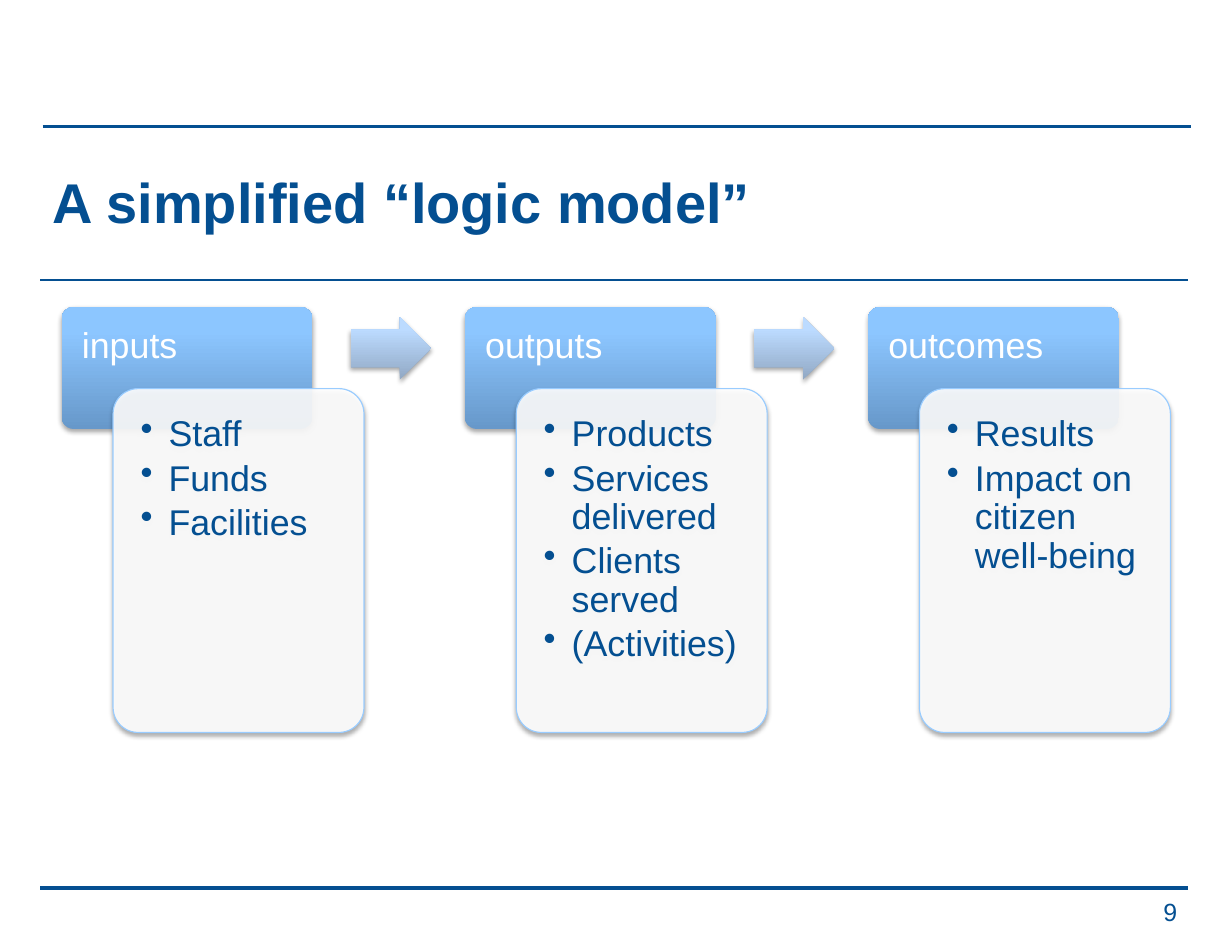
"""Build a slide showing a simplified logic model: inputs, outputs, outcomes."""
import dataclasses

import lxml.etree
import pptx
import pptx.dml.color
import pptx.enum.shapes
import pptx.enum.text
import pptx.oxml
import pptx.oxml.ns
import pptx.util

Inches = pptx.util.Inches
Pt = pptx.util.Pt
RGB = pptx.dml.color.RGBColor.from_string
Shapes = pptx.enum.shapes.MSO_SHAPE
Align = pptx.enum.text.PP_ALIGN
Anchor = pptx.enum.text.MSO_ANCHOR
qn = pptx.oxml.ns.qn


@dataclasses.dataclass(frozen=True)
class Theme:
    font: str = "Arial"
    navy: str = "044F91"
    white: str = "FFFFFF"
    panel_border: str = "99CCFF"
    header_stops: tuple = ("6798CA", "8CC6FF", "8EC7FF")
    arrow_stops: tuple = ("91A8C4", "BCDBFF", "BEDCFF")
    title_size: int = 36
    body_size: int = 23
    number_size: int = 16


def add_block(kind, left, top, width, height, adjustments, stops=None):
    """Add a softly shadowed shape, with an upward gradient if stops are given."""
    shape = slide.shapes.add_shape(
        kind, Inches(left), Inches(top), Inches(width), Inches(height))
    for index, value in enumerate(adjustments):
        shape.adjustments[index] = value
    shape.shadow.inherit = False
    properties = shape.element.spPr
    shadow = pptx.oxml.parse_xml(
        f'<a:outerShdw {pptx.oxml.ns.nsdecls("a")} blurRad="{Pt(3.1)}" dist="{Pt(1.8)}" '
        'dir="5400000" rotWithShape="0"><a:srgbClr val="000000">'
        '<a:alpha val="35000"/></a:srgbClr></a:outerShdw>')
    properties.find(qn("a:effectLst")).append(shadow)
    if stops:
        stop_list = "".join(
            f'<a:gs pos="{position}"><a:srgbClr val="{color}"/></a:gs>'
            for position, color in zip((0, 80000, 100000), stops))
        gradient = pptx.oxml.parse_xml(
            f'<a:gradFill {pptx.oxml.ns.nsdecls("a")} rotWithShape="1"><a:gsLst>{stop_list}'
            '</a:gsLst><a:lin ang="16200000" scaled="0"/></a:gradFill>')
        properties.find(qn("a:prstGeom")).addnext(gradient)
        shape.line.fill.background()
    return shape


def write_text(shape, lines, size, color, insets, anchor, align=Align.LEFT,
               bulleted=False, bold=False, spacing=1.0):
    """Fill a shape with formatted paragraphs."""
    frame = shape.text_frame
    frame.word_wrap = True
    frame.auto_size = pptx.enum.text.MSO_AUTO_SIZE.NONE
    frame.vertical_anchor = anchor
    frame.margin_left = frame.margin_right = Inches(insets[0])
    frame.margin_top = frame.margin_bottom = Inches(insets[1])
    for index, line in enumerate(lines):
        paragraph = frame.add_paragraph() if index else frame.paragraphs[0]
        paragraph.alignment = align
        paragraph.line_spacing = spacing
        if bulleted:
            paragraph.space_after = Pt(3.5)
            properties = paragraph._p.get_or_add_pPr()
            properties.set("marL", str(Inches(0.25)))
            properties.set("indent", str(Inches(-0.25)))
            lxml.etree.SubElement(properties, qn("a:buChar")).set("char", "•")
        run = paragraph.add_run()
        run.text = line
        run.font.name = theme.font
        run.font.size = Pt(size)
        run.font.bold = bold
        run.font.color.rgb = RGB(color)


theme = Theme()
presentation = pptx.Presentation()
presentation.slide_width = Inches(11)
presentation.slide_height = Inches(8.5)
slide = presentation.slides.add_slide(presentation.slide_layouts[5])

margin, rule_width = 0.36, 10.25
for left, top, weight in ((0.38, 1.13, 2.5), (margin, 7.93, 2.5), (margin, 2.5, 1.5)):
    rule = slide.shapes.add_connector(
        pptx.enum.shapes.MSO_CONNECTOR.STRAIGHT,
        Inches(left), Inches(top), Inches(left + rule_width), Inches(top))
    rule.line.color.rgb = RGB(theme.navy)
    rule.line.width = Pt(weight)
    lxml.etree.SubElement(rule.element.spPr, qn("a:effectLst"))

title = slide.shapes.title
title.left, title.top = Inches(margin), Inches(1.23)
title.width, title.height = Inches(rule_width), Inches(1.13)
write_text(title, ["A simplified “logic model”"], theme.title_size, theme.navy,
           (0.11, 0.06), Anchor.MIDDLE, bold=True)

stages = {
    "inputs": ["Staff", "Funds", "Facilities"],
    "outputs": ["Products", "Services delivered", "Clients served", "(Activities)"],
    "outcomes": ["Results", "Impact on citizen well-being"],
}
first_left, column_pitch, card_width = 0.55, 3.6, 2.24
header_top, panel_top, panel_shift = 2.74, 3.47, 0.46

for column, (name, items) in enumerate(stages.items()):
    left = first_left + column * column_pitch
    if column:
        add_block(Shapes.RIGHT_ARROW, left - 1.02, 2.83, 0.72, 0.56,
                  (0.6, 0.5), theme.arrow_stops)
    header = add_block(Shapes.ROUNDED_RECTANGLE, left, header_top, card_width, 1.09,
                       (0.1,), theme.header_stops)
    write_text(header, [name], theme.body_size, theme.white, (0.15, 0.15),
               Anchor.TOP, spacing=0.9)

    panel = add_block(Shapes.ROUNDED_RECTANGLE, left + panel_shift, panel_top,
                      card_width, 3.07, (0.1,))
    panel.fill.solid()
    panel.fill.fore_color.rgb = RGB(theme.white)
    fill_color = panel.element.spPr.find(qn("a:solidFill")).find(qn("a:srgbClr"))
    lxml.etree.SubElement(fill_color, qn("a:alpha")).set("val", "90000")
    panel.line.color.rgb = RGB(theme.panel_border)
    panel.line.width = Pt(0.75)
    write_text(panel, items, theme.body_size, theme.navy, (0.18, 0.18),
               Anchor.TOP, bulleted=True, spacing=0.9)

number = slide.shapes.add_textbox(Inches(8.05), Inches(7.94), Inches(2.57), Inches(0.39))
write_text(number, ["9"], theme.number_size, theme.navy, (0.11, 0.06),
           Anchor.MIDDLE, align=Align.RIGHT)

presentation.save("out.pptx")
